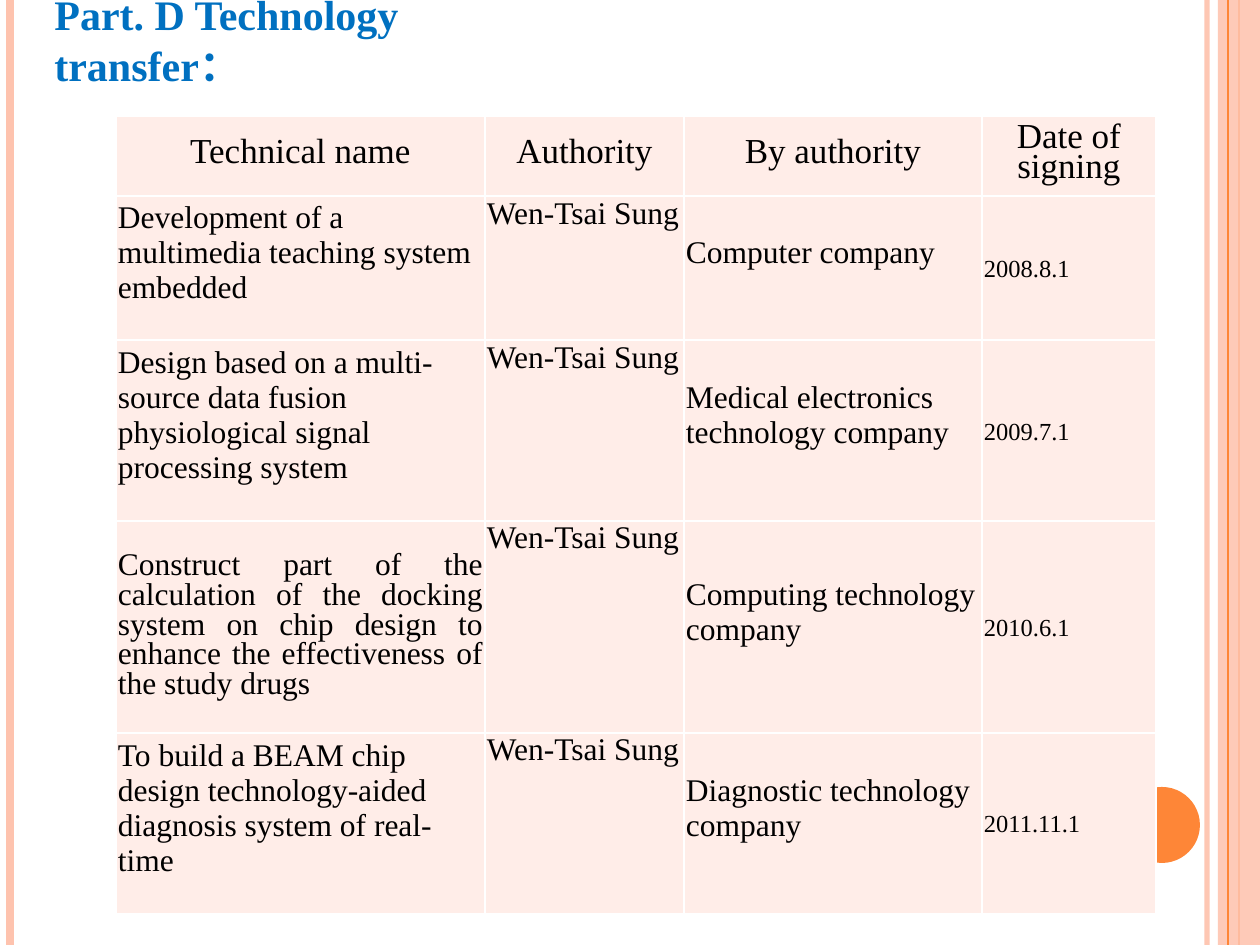
from pptx import Presentation, util as u
from pptx.dml.color import RGBColor
from pptx.enum import shapes as sh, text as tx
from pptx.oxml import parse_xml
from pptx.oxml.ns import nsdecls, qn
from lxml import etree

HUE = {"pink": "FEC3AE", "orange": "FE8637", "cell": "FFEDE8",
       "white": "FFFFFF", "black": "000000", "blue": "0070C0"}
FONT = "Times New Roman"


def px(n):
    return u.Emu(round(n * 914400 / 126))


def paint(fill, name, alpha=100):
    fill.solid()
    fill.fore_color.rgb = RGBColor.from_string(HUE[name])
    if alpha < 100:
        clr = fill._xPr.find(".//" + qn("a:srgbClr"))
        etree.SubElement(clr, qn("a:alpha"), val=str(alpha * 1000))


deck = Presentation()
deck.slide_width, deck.slide_height = px(1260), px(945)
slide = deck.slides.add_slide(deck.slide_layouts[6])
items = slide.shapes

# Side band and dot
band = items.add_shape(sh.MSO_SHAPE.RECTANGLE, px(1218), 0, px(42), px(945))
dot = items.add_shape(sh.MSO_SHAPE.OVAL, px(1124), px(787), px(76), px(76))
for shape, name, alpha in ((band, "pink", 87), (dot, "orange", 100)):
    shape.shadow.inherit = False
    paint(shape.fill, name, alpha)
    shape.line.fill.background()

# Vertical rules
for x, name, width, alpha in ((1207, "pink", 3, 93), (10, "pink", 4.5, 100),
                              (1239, "orange", 1.5, 100),
                              (1228, "orange", 0.75, 100)):
    rule = items.add_connector(sh.MSO_CONNECTOR.STRAIGHT,
                               px(x), 0, px(x), px(945))
    rule.line.width = u.Pt(width)
    paint(rule.line.fill, name, alpha)
    etree.SubElement(rule._element.spPr, qn("a:effectLst"))
    if name == "orange" and width > 1:
        # The wide orange rule lies under the band
        band._element.addprevious(rule._element)

# Table
owner = "Wen-Tsai Sung"
rows = [
    ("Technical name", "Authority", "By authority", "Date of signing"),
    ("Development of a multimedia teaching system embedded", owner,
     "Computer company", "2008.8.1"),
    ("Design based on a multi-source data fusion physiological signal "
     "processing system", owner,
     "Medical electronics technology company", "2009.7.1"),
    ("Construct part of the calculation of the docking system on chip "
     "design to enhance the effectiveness of the study drugs", owner,
     "Computing technology company", "2010.6.1"),
    ("To build a BEAM chip design technology-aided diagnosis system of "
     "real-time", owner, "Diagnostic technology company", "2011.11.1"),
]
wide = (369, 199, 298, 174)
tall = (80, 144, 181, 212, 181)
grid = items.add_table(len(rows), len(wide), px(116), px(116),
                       px(sum(wide)), px(sum(tall))).table
for col, w in zip(grid.columns, wide):
    col.width = px(w)
for row, h in zip(grid.rows, tall):
    row.height = px(h)

for r, row in enumerate(rows):
    for c, words in enumerate(row):
        cell = grid.cell(r, c)
        head, date = r == 0, c == 3
        tight = head or date or (r, c) == (3, 0)
        cell.margin_left = cell.margin_right = px(2)
        cell.margin_top = 0
        # Loose cells in the text columns sit one line above the middle
        cell.margin_bottom = 0 if tight or c == 1 else px(30)
        top = c == 1 and not head
        cell.vertical_anchor = (tx.MSO_ANCHOR.TOP if top
                                else tx.MSO_ANCHOR.MIDDLE)
        paint(cell.fill, "cell")
        for i, side in enumerate("LRTB"):
            cell._tc.tcPr.insert(i, parse_xml(
                f'<a:ln{side} {nsdecls("a")} w="12700"><a:solidFill>'
                f'<a:srgbClr val="{HUE["white"]}"/></a:solidFill></a:ln{side}>'))
        cell.text_frame.text = words
        para = cell.text_frame.paragraphs[0]
        if tight:
            para.line_spacing = u.Pt(17)
            para.alignment = (tx.PP_ALIGN.CENTER if head
                              else tx.PP_ALIGN.JUSTIFY)
        font = para.runs[0].font
        font.name = FONT
        font.size = u.Pt(20 if head else 14 if date else 18)
        font.color.rgb = RGBColor.from_string(HUE["black"])

# Title
box = items.add_textbox(px(42), px(4), px(572), px(140))
frame = box.text_frame
frame.word_wrap = True
frame.vertical_anchor = tx.MSO_ANCHOR.MIDDLE
frame.margin_right, frame.margin_bottom = px(60), px(76)
frame.text = "Part. D Technology transfer："
font = frame.paragraphs[0].runs[0].font
font.name, font.size, font.bold = FONT, u.Pt(24), True
font.color.rgb = RGBColor.from_string(HUE["blue"])

deck.save("out.pptx")
